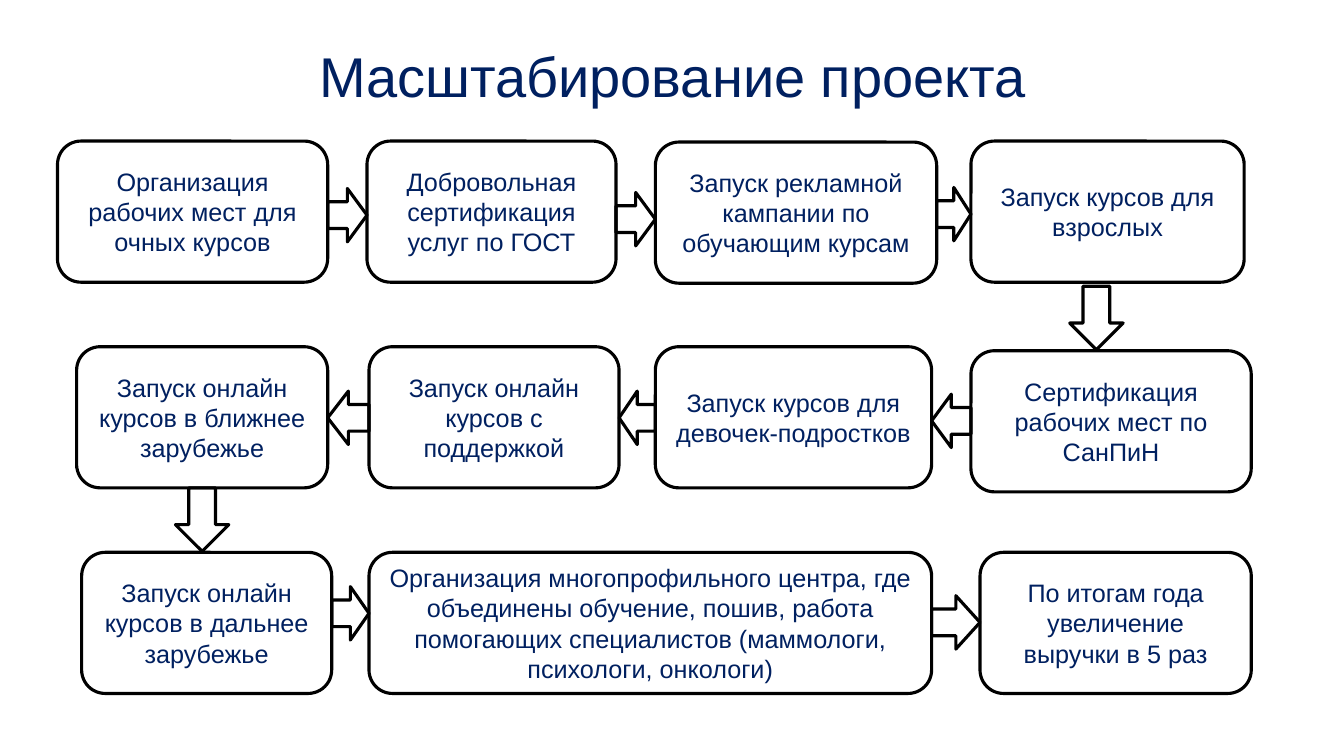
from pptx import Presentation
from pptx.dml.color import RGBColor as Rgb
from pptx.enum.shapes import MSO_SHAPE as Kind
from pptx.enum.text import MSO_ANCHOR as Anchor, PP_ALIGN as Align
from pptx.util import Pt

PX = 9144
COLORS = {"text": "002060", "line": "000000"}
FONT = "Arial"
CARD_H = 140
ARROW = 53

ROWS = [
    ((57, 140), 0, [
        (0, 0, 268, "Организация рабочих мест для очных курсов"),
        (307, 0, 247, "Добровольная сертификация услуг по ГОСТ"),
        (593, 1, 279, "Запуск рекламной кампании по обучающим курсам"),
        (906, 0, 271, "Запуск курсов для взрослых"),
    ], [47, 51, 46]),
    ((76, 344), 180, [
        (0, 0, 249, "Запуск онлайн курсов в ближнее зарубежье"),
        (290, 0, 248, "Запуск онлайн курсов с поддержкой"),
        (574, 0, 274, "Запуск курсов для девочек-подростков"),
        (887, 4, 278, "Сертификация рабочих мест по СанПиН"),
    ], [44, 44, 47]),
    ((81, 548), 0, [
        (0, 0, 248, "Запуск онлайн курсов в дальнее зарубежье"),
        (285, 0, 558, "Организация многопрофильного центра, где объединены "
                      "обучение, пошив, работа помогающих специалистов "
                      "(маммологи, психологи, онкологи)"),
        (891, 0, 269, "По итогам года увеличение выручки в 5 раз"),
    ], [34, 43]),
]
DROPS = [(1061, 284, ARROW, 63), (174, 484, ARROW, 63)]


def scale(box):
    return [n * PX for n in box]


def write(shape, text, size):
    frame = shape.text_frame
    frame.word_wrap = True
    frame.vertical_anchor = Anchor.MIDDLE
    frame.text = text
    par = frame.paragraphs[0]
    par.alignment = Align.CENTER
    font = par.runs[0].font
    font.name = FONT
    font.size = Pt(size)
    font.color.rgb = Rgb.from_string(COLORS["text"])
    return par


def outline(slide, kind, box):
    shape = slide.shapes.add_shape(kind, *scale(box))
    shape.shadow.inherit = False
    shape.fill.background()
    shape.line.color.rgb = Rgb.from_string(COLORS["line"])
    shape.line.width = Pt(2.25)
    return shape


def add_title(slide, box):
    title = slide.shapes.add_textbox(*scale(box))
    write(title, "Масштабирование проекта", 40).line_spacing = 0.9


def add_row(slide, origin, turn, cards, drops):
    left, top = origin
    for x, y, width, text in cards:
        box = (left + x, top + y, width, CARD_H)
        write(outline(slide, Kind.ROUNDED_RECTANGLE, box), text, 18)
    for card, after, y in zip(cards, cards[1:], drops):
        start = card[0] + card[2]
        box = (left + start, top + y, after[0] - start, ARROW)
        outline(slide, Kind.RIGHT_ARROW, box).rotation = turn


def main():
    deck = Presentation()
    deck.slide_width, deck.slide_height = scale((1333, 750))
    slide = deck.slides.add_slide(deck.slide_layouts[6])
    add_title(slide, (92, 17, 1150, 124))
    for row in ROWS:
        add_row(slide, *row)
    for box in DROPS:
        outline(slide, Kind.DOWN_ARROW, box)
    deck.save("out.pptx")


if __name__ == "__main__":
    main()
